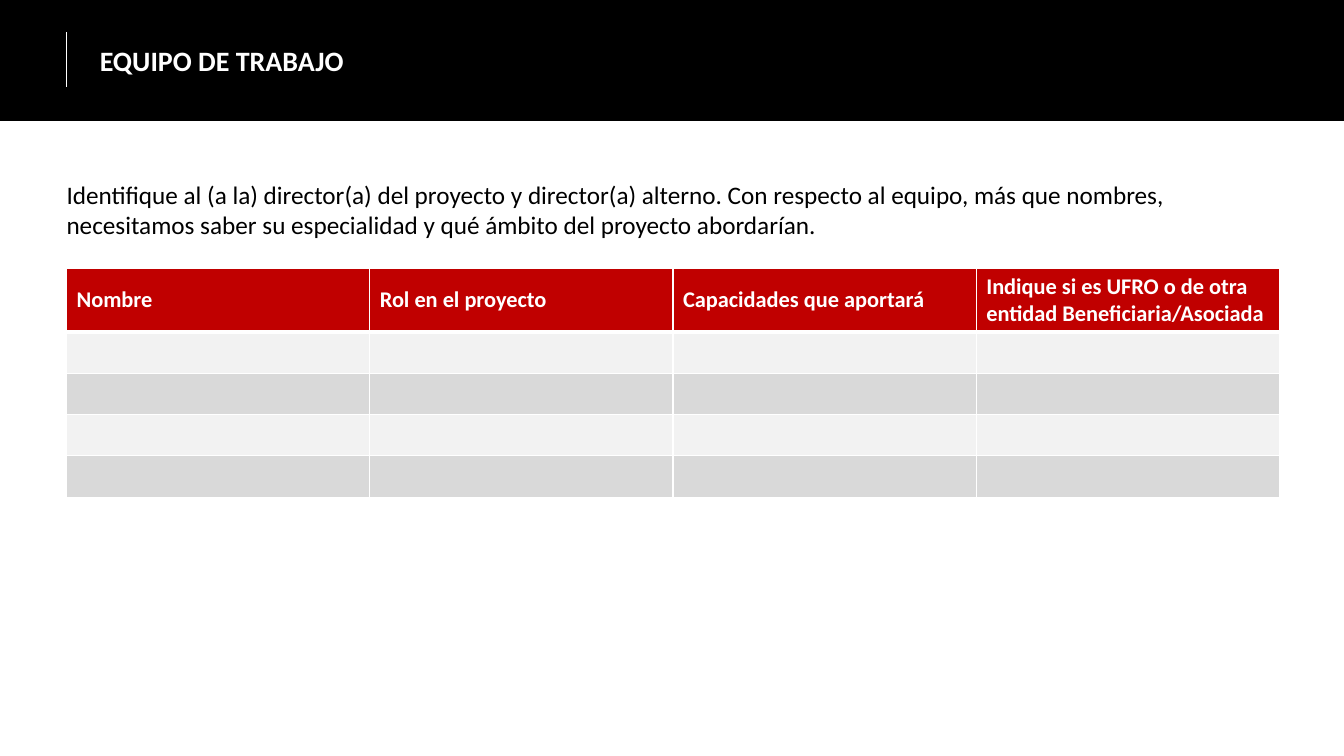
from dataclasses import dataclass

from lxml.etree import SubElement
from pptx import Presentation
from pptx.dml.color import RGBColor
from pptx.enum.shapes import MSO_CONNECTOR as Connector, MSO_SHAPE as Preset
from pptx.enum.text import MSO_ANCHOR as Anchor
from pptx.oxml.ns import qn
from pptx.slide import Slide
from pptx.table import _Cell as Cell
from pptx.text.text import TextFrame
from pptx.util import Emu, Inches, Pt

WIDTH, HEIGHT = Inches(13.33), Inches(7.5)
GRID_COLS, GRID_ROWS = 40, 75
MARGIN = 1.98
WHITE, BLACK, RED = "FFFFFF", "000000", "C00000"
BANDS = ("F2F2F2", "D9D9D9")
HEADINGS = (
    "Nombre",
    "Rol en el proyecto",
    "Capacidades que aportará",
    "Indique si es UFRO o de otra entidad Beneficiaria/Asociada",
)
MEMBER_ROWS = 4
TABLE_COLS = 36.1
HEADING_ROWS, MEMBER_HEIGHT = 6.2, 4.1


@dataclass(frozen=True)
class Area:
    col: float
    row: float
    cols: float
    rows: float

    def box(self) -> tuple[Emu, Emu, Emu, Emu]:
        return across(self.col), down(self.row), across(self.cols), down(self.rows)


@dataclass(frozen=True)
class Style:
    size: int
    color: str
    bold: bool = False


@dataclass(frozen=True)
class Passage:
    area: Area
    text: str
    style: Style
    anchor: Anchor
    inset_x: float
    inset_y: float


PASSAGES = (
    Passage(
        Area(MARGIN, 17.8, 36.36, 6.1),
        "Identifique al (a la) director(a) del proyecto y director(a) alterno. "
        "Con respecto al equipo, más que nombres, necesitamos saber su especialidad "
        "y qué ámbito del proyecto abordarían.",
        Style(18, BLACK), Anchor.TOP, 0, 0,
    ),
    Passage(
        Area(2.67, 3.8, 21.87, 4.4),
        "EQUIPO DE TRABAJO",
        Style(20, WHITE, True), Anchor.MIDDLE, 0.3, 0.5,
    ),
)


def across(cols: float) -> Emu:
    return Emu(round(WIDTH * cols / GRID_COLS))


def down(rows: float) -> Emu:
    return Emu(round(HEIGHT * rows / GRID_ROWS))


def rgb(color: str) -> RGBColor:
    return RGBColor.from_string(color)


def write(frame: TextFrame, text: str, style: Style) -> None:
    run = frame.paragraphs[0].add_run()
    run.text = text
    run.font.name = "Calibri"
    run.font.size = Pt(style.size)
    run.font.bold = style.bold
    run.font.color.rgb = rgb(style.color)


def draw_banner(slide: Slide) -> None:
    banner = slide.shapes.add_shape(Preset.RECTANGLE, *Area(0, 0, GRID_COLS, 12).box())
    banner.shadow.inherit = False
    banner.fill.solid()
    banner.fill.fore_color.rgb = rgb(BLACK)
    banner.line.fill.background()
    rule = slide.shapes.add_connector(
        Connector.STRAIGHT, across(MARGIN), down(3.2), across(MARGIN), down(8.6)
    )
    rule.line.color.rgb = rgb(WHITE)
    rule.line.width = Pt(0.75)
    SubElement(rule._element.spPr, qn("a:effectLst"))


def draw_passage(slide: Slide, passage: Passage) -> None:
    frame = slide.shapes.add_textbox(*passage.area.box()).text_frame
    frame.word_wrap = True
    frame.vertical_anchor = passage.anchor
    frame.margin_left = frame.margin_right = across(passage.inset_x)
    frame.margin_top = frame.margin_bottom = down(passage.inset_y)
    write(frame, passage.text, passage.style)


def paint_cell(cell: Cell, fill: str, top: int, bottom: int) -> None:
    properties = cell._tc.get_or_add_tcPr()
    for side, points in (("L", 1), ("R", 1), ("T", top), ("B", bottom)):
        border = SubElement(properties, qn(f"a:ln{side}"), w=str(Pt(points)))
        SubElement(SubElement(border, qn("a:solidFill")), qn("a:srgbClr"), val=WHITE)
    cell.fill.solid()
    cell.fill.fore_color.rgb = rgb(fill)


def draw_team_table(slide: Slide) -> None:
    area = Area(MARGIN, 26.6, TABLE_COLS, HEADING_ROWS + MEMBER_ROWS * MEMBER_HEIGHT)
    team = slide.shapes.add_table(MEMBER_ROWS + 1, len(HEADINGS), *area.box()).table
    for column in team.columns:
        column.width = across(TABLE_COLS / len(HEADINGS))
    for index, row in enumerate(team.rows):
        row.height = down(MEMBER_HEIGHT if index else HEADING_ROWS)
        for cell, heading in zip(row.cells, HEADINGS):
            if index:
                paint_cell(cell, BANDS[(index - 1) % 2], 3 if index == 1 else 1, 1)
            else:
                paint_cell(cell, RED, 1, 3)
                cell.vertical_anchor = Anchor.MIDDLE
                write(cell.text_frame, heading, Style(16, WHITE, True))


def main() -> None:
    deck = Presentation()
    deck.slide_width, deck.slide_height = WIDTH, HEIGHT
    slide = deck.slides.add_slide(deck.slide_layouts[6])
    draw_banner(slide)
    for passage in PASSAGES:
        draw_passage(slide, passage)
    draw_team_table(slide)
    deck.save("out.pptx")


if __name__ == "__main__":
    main()
